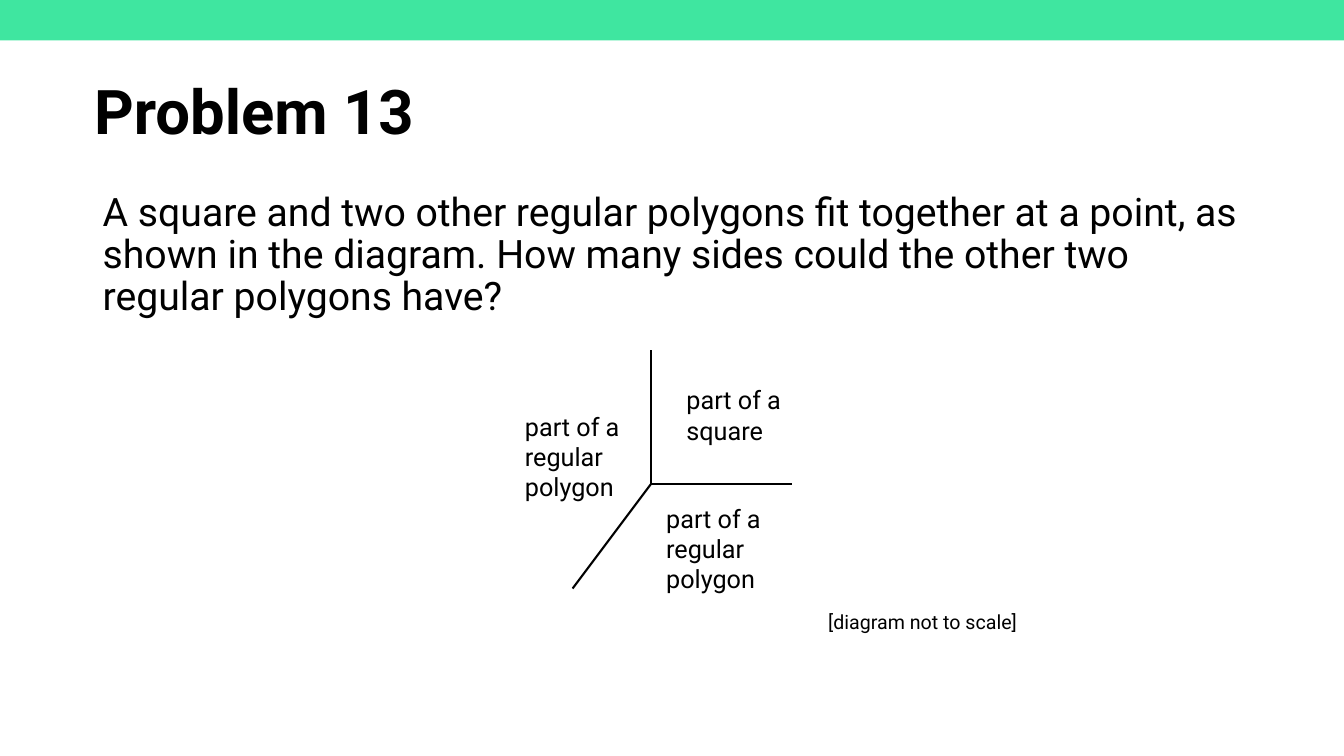
from lxml import etree
from pptx import Presentation
from pptx.dml.color import RGBColor
from pptx.enum.shapes import MSO_CONNECTOR, MSO_SHAPE
from pptx.enum.text import MSO_ANCHOR, MSO_AUTO_SIZE, PP_ALIGN
from pptx.oxml.ns import qn
from pptx.util import Cm, Pt

GREEN = RGBColor(0x3F, 0xE6, 0xA0)
BLACK = RGBColor(0, 0, 0)
RECT = MSO_SHAPE.RECTANGLE
LINE = MSO_CONNECTOR.STRAIGHT
LEFT = PP_ALIGN.LEFT
TOP, MID = MSO_ANCHOR.TOP, MSO_ANCHOR.MIDDLE
FIXED = MSO_AUTO_SIZE.NONE

RAYS = [(0, -3.38), (3.56, 0), (-1.98, 2.64)]
PARTS = [
    ("part of a square", 0.64, -2.62, 2),
    ("part of a regular polygon", -3.43, -1.96, 2.72),
    ("part of a regular polygon", 0.13, 0.36, 2.72),
]


def style(shape, text, size, bold=False, gap=1.0, anchor=TOP):
    """Write and format the text of a shape."""
    frame = shape.text_frame
    frame.text = text
    look = {"word_wrap": True, "auto_size": FIXED, "vertical_anchor": anchor}
    for key, value in look.items():
        setattr(frame, key, value)
    para = frame.paragraphs[0]
    para.alignment, para.line_spacing = LEFT, gap
    font = para.runs[0].font
    for key, value in {"name": "Roboto", "size": Pt(size), "bold": bold}.items():
        setattr(font, key, value)
    font.color.rgb = BLACK


def add_text(slide, text, box, size, gap=1.0):
    """Add a text box at a box given in centimetres."""
    style(slide.shapes.add_textbox(*map(Cm, box)), text, size, gap=gap)


def add_band(slide, box):
    """Add the green band along the top."""
    band = slide.shapes.add_shape(RECT, *map(Cm, box))
    band.shadow.inherit = False
    band.fill.solid()
    band.fill.fore_color.rgb = GREEN
    band.line.fill.background()


def add_title(slide, text, box):
    """Place and format the title."""
    title = slide.shapes.title
    for key, value in zip(("left", "top", "width", "height"), box):
        setattr(title, key, Cm(value))
    style(title, text, 44, bold=True, gap=0.9, anchor=MID)


def add_figure(slide, x, y):
    """Draw three rays from a point and name the parts between them."""
    for dx, dy in RAYS:
        ray = slide.shapes.add_connector(
            LINE, Cm(x), Cm(y), Cm(x + dx), Cm(y + dy))
        ray.line.color.rgb = BLACK
        ray.line.width = Pt(1.5)
        etree.SubElement(ray._element.spPr, qn("a:effectLst"))
    for text, dx, dy, height in PARTS:
        add_text(slide, text, (x + dx, y + dy, 3.43, height), 18)


def main():
    """Build and save the slide."""
    deck = Presentation()
    deck.slide_width, deck.slide_height = Cm(33.87), Cm(19.05)
    slide = deck.slides.add_slide(deck.slide_layouts[5])
    add_band(slide, (0, -0.05, 33.87, 1.07))
    add_title(slide, "Problem 13", (2.12, 1.04, 29.21, 3.68))
    add_text(slide, "A square and two other regular polygons fit together at a "
             "point, as shown in the diagram. How many sides could the other "
             "two regular polygons have?", (2.34, 4.72, 29.21, 3.6), 28, 0.9)
    add_figure(slide, 16.41, 12.19)
    add_text(slide, "[diagram not to scale]", (20.62, 15.3, 5.8, 0.9), 14, 0.9)
    deck.save("out.pptx")


if __name__ == "__main__":
    main()
